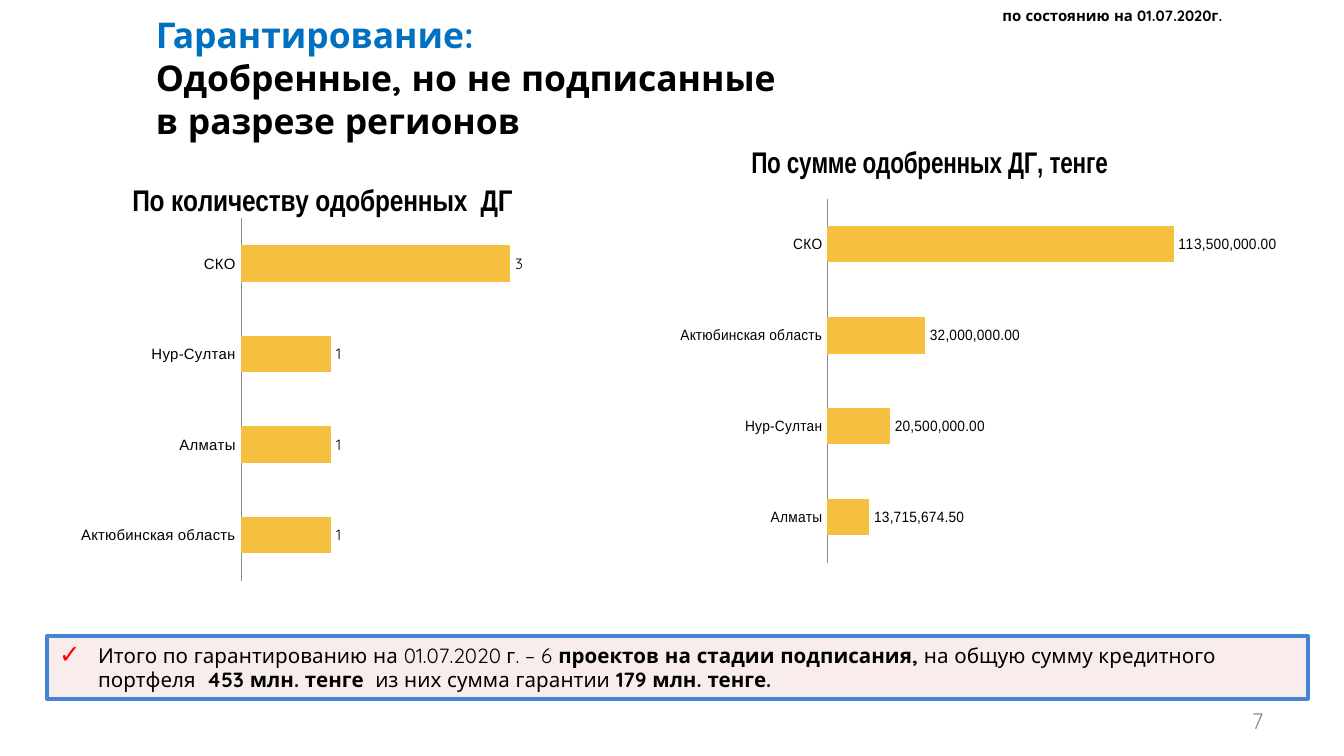
"""Build the slide on approved but unsigned guarantees by region."""
from lxml.etree import SubElement
from pptx import Presentation
from pptx.chart.data import CategoryChartData
from pptx.dml.color import RGBColor
from pptx.enum.chart import XL_CHART_TYPE, XL_LABEL_POSITION, XL_TICK_MARK
from pptx.enum.shapes import MSO_SHAPE
from pptx.enum.text import MSO_ANCHOR, PP_ALIGN
from pptx.oxml import parse_xml
from pptx.oxml.ns import nsdecls, qn
from pptx.util import Inches, Pt

BLACK = RGBColor(0, 0, 0)
BLUE = RGBColor(0x00, 0x70, 0xC0)
EDGE = RGBColor(0x45, 0x84, 0xD3)
PINK = RGBColor(0xF2, 0xDC, 0xDB)
GRAY = RGBColor(0x8C, 0x8C, 0x8C)
GOLD = RGBColor(0xF5, 0xC0, 0x40)

deck = Presentation()
deck.slide_width, deck.slide_height = Pt(720), Pt(405)
col, row = deck.slide_width / 100, deck.slide_height / 100
slide = deck.slides.add_slide(deck.slide_layouts[5])
shapes = slide.shapes


def place(left, top, width, height):
    """Turn grid columns and rows into lengths."""
    return int(left * col), int(top * row), int(width * col), int(height * row)


def style(font, size, tone=BLACK, bold=False, name="Quicksand"):
    """Format a font."""
    for key, val in {"size": Pt(size), "bold": bold, "name": name}.items():
        setattr(font, key, val)
    font.color.rgb = tone


title = shapes.title
spot = zip(("left", "top", "width", "height"), place(10.6, 6.58, 90, 12.27))
for key, val in spot:
    setattr(title, key, val)
frame = title.text_frame
form = {"word_wrap": True, "vertical_anchor": MSO_ANCHOR.MIDDLE, "margin_bottom": Inches(0.33)}
for key, val in form.items():
    setattr(frame, key, val)
para = frame.paragraphs[0]
para.alignment = PP_ALIGN.LEFT
lines = [("Гарантирование:", BLUE), ("Одобренные, но не подписанные", BLACK), ("в разрезе регионов", BLACK)]
for rank, (text, tone) in enumerate(lines):
    if rank:
        para.add_line_break()
    run = para.add_run()
    run.text = text
    style(run.font, 19, tone, True)

notes = [
    ("по состоянию на 01.07.2020г.", (73.6, 0, 22.8, 4.27), 8, BLACK, True, PP_ALIGN.LEFT, MSO_ANCHOR.TOP),
    ("7", (71.7, 92.62, 23.3, 5.33), 12, GRAY, False, PP_ALIGN.RIGHT, MSO_ANCHOR.MIDDLE),
]
for text, spot, size, tone, bold, side, anchor in notes:
    frame = shapes.add_textbox(*place(*spot)).text_frame
    frame.word_wrap, frame.vertical_anchor = True, anchor
    para = frame.paragraphs[0]
    para.alignment = side
    run = para.add_run()
    run.text = text
    style(run.font, size, tone, bold)

total = shapes.add_shape(MSO_SHAPE.RECTANGLE, *place(3.5, 84.09, 93.8, 8.36))
total.shadow.inherit = False
total.fill.solid()
total.fill.fore_color.rgb = PINK
tint = total.fill._xPr.find(qn("a:solidFill"))[0]
SubElement(tint, qn("a:alpha"), val="50000")
total.line.color.rgb, total.line.width = EDGE, Pt(2)
frame = total.text_frame
form = {
    "word_wrap": True, "vertical_anchor": MSO_ANCHOR.MIDDLE,
    "margin_left": Inches(0.08), "margin_right": Inches(0.08),
    "margin_top": Inches(0.04), "margin_bottom": Inches(0.04),
}
for key, val in form.items():
    setattr(frame, key, val)
para = frame.paragraphs[0]
props = para._p.get_or_add_pPr()
props.set("marL", str(Inches(0.3)))
props.set("indent", str(Inches(-0.29)))
SubElement(SubElement(props, qn("a:buClr")), qn("a:srgbClr"), val="FF0000")
SubElement(props, qn("a:buSzPct"), val="125000")
SubElement(props, qn("a:buFont"), typeface="Arial")
SubElement(props, qn("a:buChar"), char="✓")
for key, val in {"alignment": PP_ALIGN.LEFT, "space_after": Pt(6)}.items():
    setattr(para, key, val)
parts = [
    "Итого по гарантированию на 01.07.2020 г. – 6", " проектов на стадии подписания, ",
    "на общую сумму кредитного портфеля  ", "453 млн. тенге  ",
    "из них сумма гарантии ", "179 млн. тенге.",
]
for rank, text in enumerate(parts):
    run = para.add_run()
    run.text = text
    style(run.font, 11, bold=rank % 2 == 1)

charts = [
    {
        "head": "По количеству одобренных  ДГ", "spot": (5.1, 21.69, 37.8, 57.42),
        "data": {"Актюбинская область": 1, "Алматы": 1, "Нур-Султан": 1, "СКО": 3},
        "top": 3.5, "mask": "#,##0", "face": "Quicksand",
        "plot": (0.34, 0.125, 0.617, 0.835), "lead": (0.115, 0.04),
    },
    {
        "head": "По сумме одобренных ДГ, тенге", "spot": (50, 19.02, 45, 60.27),
        "data": {"Алматы": 13715674.5, "Нур-Султан": 20500000, "Актюбинская область": 32000000, "СКО": 113500000},
        "top": 120000000, "mask": "#,##0.00", "face": "Arial",
        "plot": (0.28, 0.121, 0.659, 0.799), "lead": (0.134, 0),
    },
]
for item in charts:
    data = CategoryChartData(number_format=item["mask"])
    data.categories = list(item["data"])
    data.add_series("Series 1", list(item["data"].values()))
    chart = shapes.add_chart(XL_CHART_TYPE.BAR_CLUSTERED, *place(*item["spot"]), data).chart
    style(chart.font, 10)
    chart.has_legend = False
    chart.has_title = True
    head = chart.chart_title
    run = head.text_frame.paragraphs[0].add_run()
    run.text = item["head"]
    style(run.font, 16, bold=True, name="Arial Narrow")
    head.include_in_layout = False

    axis = chart.category_axis
    axis.major_tick_mark = axis.minor_tick_mark = XL_TICK_MARK.NONE
    axis.format.line.color.rgb = GRAY
    style(axis.tick_labels.font, 8, name="Arial")
    scale = chart.value_axis
    form = {"visible": False, "has_major_gridlines": False, "minimum_scale": 0, "maximum_scale": item["top"]}
    for key, val in form.items():
        setattr(scale, key, val)

    plot = chart.plots[0]
    plot.gap_width, plot.vary_by_categories, plot.has_data_labels = 150, False, True
    fill = plot.series[0].format.fill
    fill.solid()
    fill.fore_color.rgb = GOLD
    tags = plot.data_labels
    form = {
        "show_value": True, "number_format": item["mask"],
        "number_format_is_linked": False, "position": XL_LABEL_POSITION.OUTSIDE_END,
    }
    for key, val in form.items():
        setattr(tags, key, val)
    style(tags.font, 8, name=item["face"])

    area = chart._chartSpace.chart.plotArea
    for node, vals in ((head._element, item["lead"]), (area, item["plot"])):
        for old in node.findall(qn("c:layout")):
            node.remove(old)
        lay = parse_xml(f"<c:layout {nsdecls('c')}><c:manualLayout/></c:layout>")
        if node is area:
            SubElement(lay[0], qn("c:layoutTarget"), val="inner")
        for axis in "xy":
            SubElement(lay[0], qn(f"c:{axis}Mode"), val="edge")
        for key, val in zip("xywh", vals):
            SubElement(lay[0], qn(f"c:{key}"), val=str(val))
        node.insert(0 if node is area else 1, lay)

deck.save("out.pptx")
